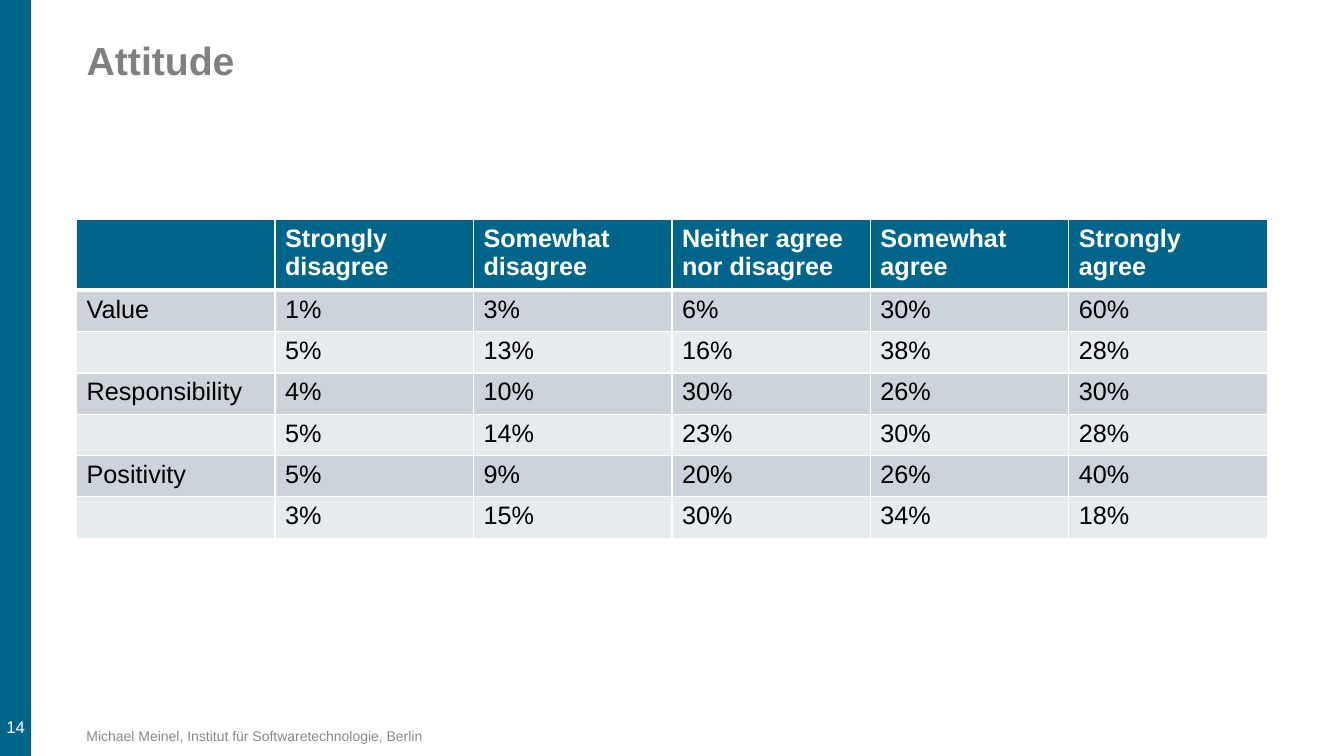
from dataclasses import dataclass

from lxml import etree
from pptx import Presentation
from pptx.dml.color import RGBColor
from pptx.enum import shapes, text
from pptx.oxml import ns
from pptx.util import Inches, Pt

BLUE, WHITE, BLACK = "00658B", "FFFFFF", "000000"
BANDS = ("CCD3DA", "E7EAEE")
LEFT = 0.76
HEAD = ("", "Strongly disagree", "Somewhat disagree",
        "Neither agree nor disagree", "Somewhat\nagree", "Strongly\vagree")


@dataclass
class Topic:
    name: str
    first: tuple[int, ...]
    second: tuple[int, ...]


TOPICS = (
    Topic("Value", (1, 3, 6, 30, 60), (5, 13, 16, 38, 28)),
    Topic("Responsibility", (4, 10, 30, 26, 30), (5, 14, 23, 30, 28)),
    Topic("Positivity", (5, 9, 20, 26, 40), (3, 15, 30, 34, 18)),
)


@dataclass
class Style:
    size: int
    color: str
    bold: bool = False
    align: text.PP_ALIGN = text.PP_ALIGN.LEFT


def paint(target, color: str) -> None:
    """Give a fill or a font a solid colour."""
    if hasattr(target, "solid"):
        target.solid()
        target.fore_color.rgb = RGBColor.from_string(color)
    else:
        target.color.rgb = RGBColor.from_string(color)


def write(frame, words: str, style: Style) -> None:
    frame.text = words
    for para in frame.paragraphs:
        para.alignment = style.align
        for run in para.runs:
            font = run.font
            font.name, font.size, font.bold = "Arial", Pt(style.size), style.bold
            paint(font, style.color)


def border(cell, bottom: int) -> None:
    """Draw white cell edges; bottom is the width of the lower one."""
    props = cell._tc.get_or_add_tcPr()
    edges = (("lnL", 1), ("lnR", 1), ("lnT", 1), ("lnB", bottom))
    for spot, (tag, width) in enumerate(edges):
        line = etree.Element(ns.qn(f"a:{tag}"), w=str(Pt(width)))
        fill = etree.SubElement(line, ns.qn("a:solidFill"))
        etree.SubElement(fill, ns.qn("a:srgbClr"), val=WHITE)
        props.insert(spot, line)


def add_grid(slide) -> None:
    rows = [HEAD]
    for topic in TOPICS:
        for name, shares in ((topic.name, topic.first), ("", topic.second)):
            rows.append((name, *(f"{share}%" for share in shares)))
    frame = slide.shapes.add_table(len(rows), len(HEAD), Inches(LEFT), Inches(2.18),
                                   Inches(11.81), Inches(3.11))
    table = frame.table
    for r, row in enumerate(rows):
        top = r == 0
        table.rows[r].height = Inches(0.65 if top else 0.41)
        style = Style(18, WHITE if top else BLACK, top)
        for c, words in enumerate(row):
            cell = table.cell(r, c)
            write(cell.text_frame, words, style)
            paint(cell.fill, BLUE if top else BANDS[(r - 1) % 2])
            border(cell, 3 if top else 1)


def add_bar(slide) -> None:
    bar = slide.shapes.add_shape(shapes.MSO_SHAPE.RECTANGLE, 0, 0,
                                 Inches(0.31), Inches(7.5))
    bar.shadow.inherit = False
    paint(bar.fill, BLUE)
    bar.line.fill.background()


def add_page(slide) -> None:
    box = slide.shapes.add_textbox(0, Inches(5.84), Inches(0.31), Inches(1.57))
    frame = box.text_frame
    frame.word_wrap = False
    frame.vertical_anchor = text.MSO_ANCHOR.BOTTOM
    frame.margin_left = frame.margin_right = Inches(0.04)
    frame.margin_top = frame.margin_bottom = Inches(0.1)
    write(frame, "14", Style(12, WHITE, align=text.PP_ALIGN.CENTER))


def add_foot(slide) -> None:
    box = slide.shapes.add_textbox(Inches(LEFT), Inches(7.16), Inches(4.5), Inches(0.28))
    frame = box.text_frame
    frame.word_wrap = True
    frame.vertical_anchor = text.MSO_ANCHOR.MIDDLE
    write(frame, "Michael Meinel, Institut für Softwaretechnologie, Berlin",
          Style(10, "898989"))


def set_title(slide) -> None:
    title = slide.shapes.title
    title.left, title.top = Inches(LEFT), Inches(0.36)
    title.width, title.height = Inches(11), Inches(1.08)
    frame = title.text_frame
    frame.vertical_anchor = text.MSO_ANCHOR.TOP
    write(frame, "Attitude", Style(28, "808080", True))
    frame.paragraphs[0].line_spacing = 0.9


def main() -> None:
    deck = Presentation()
    deck.slide_width, deck.slide_height = Inches(13.33), Inches(7.5)
    slide = deck.slides.add_slide(deck.slide_layouts[5])
    add_bar(slide)
    add_page(slide)
    add_grid(slide)
    add_foot(slide)
    set_title(slide)
    deck.save("out.pptx")


if __name__ == "__main__":
    main()
